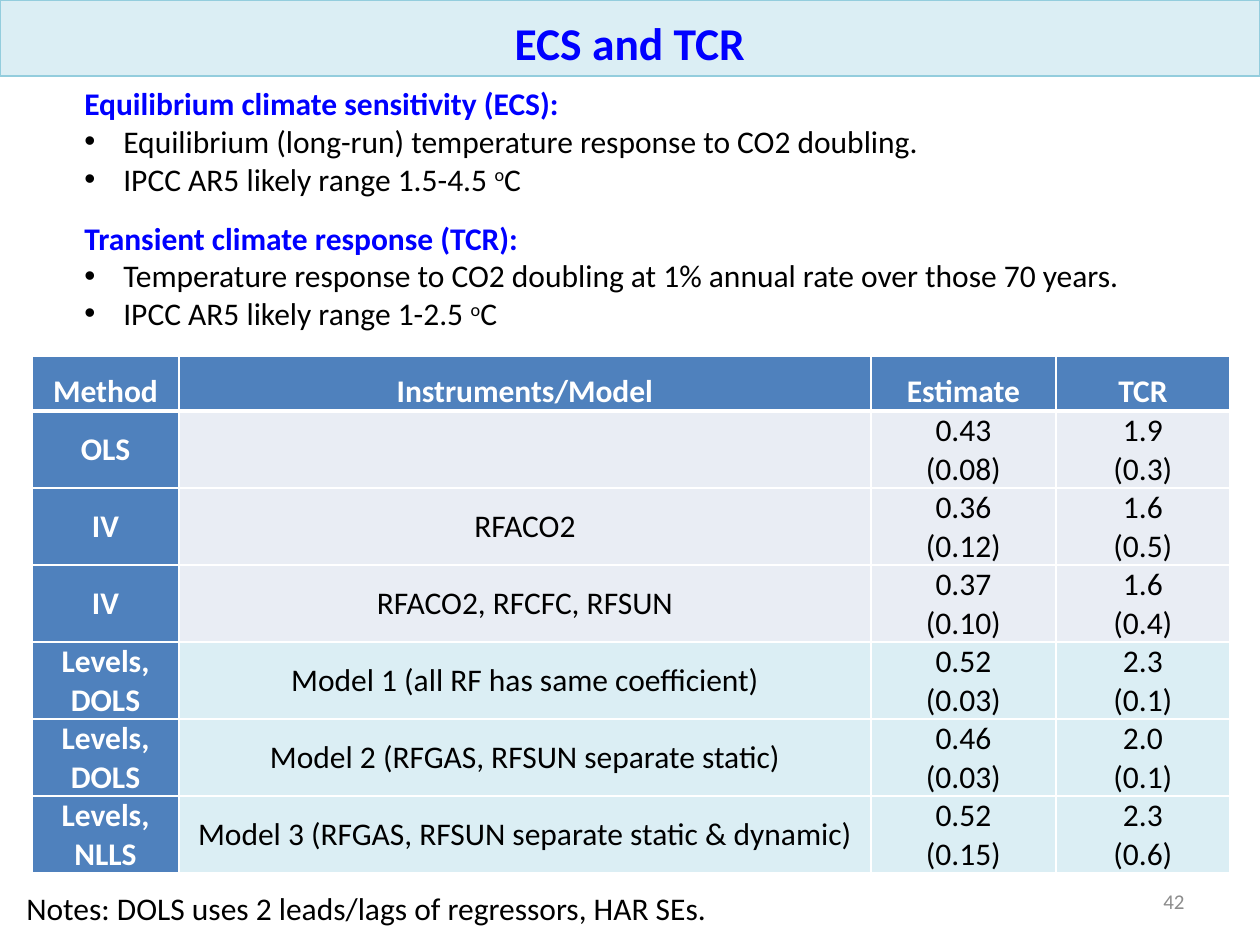
from lxml import etree
from pptx import Presentation, util as u
from pptx.dml.color import RGBColor
from pptx.enum import shapes, text
from pptx.oxml.ns import qn

SCALE = 914400 / 126
BLUE, BLACK, WHITE = "0000FF", "000000", "FFFFFF"
HEAD, GREY_BAND, AQUA = "4F81BD", "E9EDF4", "DBEEF4"
LEFT, CENTER, RIGHT = (text.PP_ALIGN.LEFT, text.PP_ALIGN.CENTER,
                       text.PP_ALIGN.RIGHT)
TOP, MIDDLE, BOTTOM = (text.MSO_ANCHOR.TOP, text.MSO_ANCHOR.MIDDLE,
                       text.MSO_ANCHOR.BOTTOM)

DEFINITIONS = [
    ("Equilibrium climate sensitivity (ECS):",
     "Equilibrium (long-run) temperature response to CO2 doubling.",
     "IPCC AR5 likely range 1.5-4.5 "),
    ("Transient climate response (TCR):",
     "Temperature response to CO2 doubling at 1% annual rate over those 70 years.",
     "IPCC AR5 likely range 1-2.5 "),
]
COLUMNS = {"Method": 147, "Instruments/Model": 692, "Estimate": 185, "TCR": 174}
RESULTS = [
    ("OLS", "", "0.43\n(0.08)", "1.9\n(0.3)"),
    ("IV", "RFACO2", "0.36\n(0.12)", "1.6\n(0.5)"),
    ("IV", "RFACO2, RFCFC, RFSUN", "0.37\n(0.10)", "1.6\n(0.4)"),
    ("Levels,\nDOLS", "Model 1 (all RF has same coefficient)",
     "0.52\n(0.03)", "2.3\n(0.1)"),
    ("Levels,\nDOLS", "Model 2 (RFGAS, RFSUN separate static)",
     "0.46\n(0.03)", "2.0\n(0.1)"),
    ("Levels,\nNLLS", "Model 3 (RFGAS, RFSUN separate static & dynamic)",
     "0.52\n(0.15)", "2.3\n(0.6)"),
]


def px(n):
    return u.Emu(round(n * SCALE))


def rgb(value):
    return RGBColor.from_string(value)


def style(font, color=BLACK, size=18, bold=False):
    formats = {"name": "Calibri", "size": u.Pt(size), "bold": bold}
    for name, value in formats.items():
        setattr(font, name, value)
    font.color.rgb = rgb(color)


def add_run(p, words, **formats):
    r = p.add_run()
    r.text = words
    style(r.font, **formats)
    return r


def add_text_box(s, box, anchor=TOP, wrap=True):
    tf = s.shapes.add_textbox(*map(px, box)).text_frame
    tf.word_wrap = wrap
    tf.vertical_anchor = anchor
    return tf


def add_line(s, box, words, align=LEFT, anchor=TOP, wrap=True, **formats):
    """Place a text box that holds a single line."""
    p = add_text_box(s, box, anchor, wrap).paragraphs[0]
    p.alignment = align
    add_run(p, words, **formats)


def add_title(s, box, words):
    sp = s.shapes.add_shape(shapes.MSO_SHAPE.RECTANGLE, *map(px, box))
    sp.shadow.inherit = False
    sp.fill.solid()
    sp.fill.fore_color.rgb = rgb(AQUA)
    sp.line.color.rgb = rgb("93CDDD")
    sp.line.width = 0
    tf = sp.text_frame
    tf.vertical_anchor = BOTTOM
    p = tf.paragraphs[0]
    p.alignment = CENTER
    add_run(p, words, color=BLUE, size=26, bold=True)


def add_bullet(tf, words):
    p = tf.add_paragraph()
    pPr = p._p.get_or_add_pPr()
    pPr.set("marL", str(px(39)))
    pPr.set("indent", str(-px(39)))
    etree.SubElement(pPr, qn("a:buFont"), typeface="Arial")
    etree.SubElement(pPr, qn("a:buChar"), char="•")
    add_run(p, words)
    return p


def add_definitions(s, box):
    tf = add_text_box(s, box)
    for i, (heading, meaning, likely_range) in enumerate(DEFINITIONS):
        p = tf.add_paragraph() if i else tf.paragraphs[0]
        p.space_before = u.Pt(12 if i else 0)
        add_run(p, heading, color=BLUE, bold=True)
        add_bullet(tf, meaning)
        p = add_bullet(tf, likely_range)
        degree = add_run(p, "o")
        degree.font._element.set("baseline", "30000")
        add_run(p, "C")


def set_borders(cell, **widths):
    """Draw white borders; widths in points by side: L, R, T, B."""
    tcPr = cell._tc.get_or_add_tcPr()
    for i, side in enumerate("LRTB"):
        ln = etree.Element(qn(f"a:ln{side}"), w=str(u.Pt(widths.get(side, 1))))
        fill = etree.SubElement(ln, qn("a:solidFill"))
        etree.SubElement(fill, qn("a:srgbClr"), val=WHITE)
        tcPr.insert(i, ln)


def fill_cell(cell, words, fill, color, bold, anchor):
    formats = {"margin_left": px(1), "margin_right": px(1), "margin_top": px(1),
               "margin_bottom": 0, "vertical_anchor": anchor}
    for name, value in formats.items():
        setattr(cell, name, value)
    cell.fill.solid()
    cell.fill.fore_color.rgb = rgb(fill)
    cell.text = words
    for p in cell.text_frame.paragraphs:
        p.alignment = CENTER
        for r in p.runs:
            style(r.font, color=color, bold=bold)


def add_results(s, left, top, head_height, row_height):
    rows = [tuple(COLUMNS), *RESULTS]
    box = (left, top, sum(COLUMNS.values()),
           head_height + row_height * len(RESULTS))
    table = s.shapes.add_table(len(rows), len(COLUMNS), *map(px, box)).table
    table.horz_banding = False
    for column, width in zip(table.columns, COLUMNS.values()):
        column.width = px(width)
    for i, row in enumerate(rows):
        table.rows[i].height = px(row_height if i else head_height)
        band = GREY_BAND if i < 4 else AQUA
        for j, words in enumerate(row):
            heading = i == 0 or j == 0
            cell = table.cell(i, j)
            fill_cell(cell, words, HEAD if heading else band,
                      WHITE if heading else BLACK, heading,
                      MIDDLE if i else BOTTOM)
            set_borders(cell, T=3 if i == 1 else 1, B=1 if i else 3)


def main():
    prs = Presentation()
    prs.slide_width, prs.slide_height = px(1260), px(945)
    s = prs.slides.add_slide(prs.slide_layouts[6])
    add_title(s, (0, 0, 1260, 76), "ECS and TCR")
    add_line(s, (1124, 876, 73, 50), "42", align=RIGHT, anchor=MIDDLE,
             color="8C8C8C", size=12)
    add_definitions(s, (72, 78, 1115, 263))
    add_results(s, 32, 356, head_height=55, row_height=77)
    add_line(s, (14, 883, 721, 50),
             "Notes: DOLS uses 2 leads/lags of regressors, HAR SEs.", wrap=False)
    prs.save("out.pptx")


if __name__ == "__main__":
    main()
